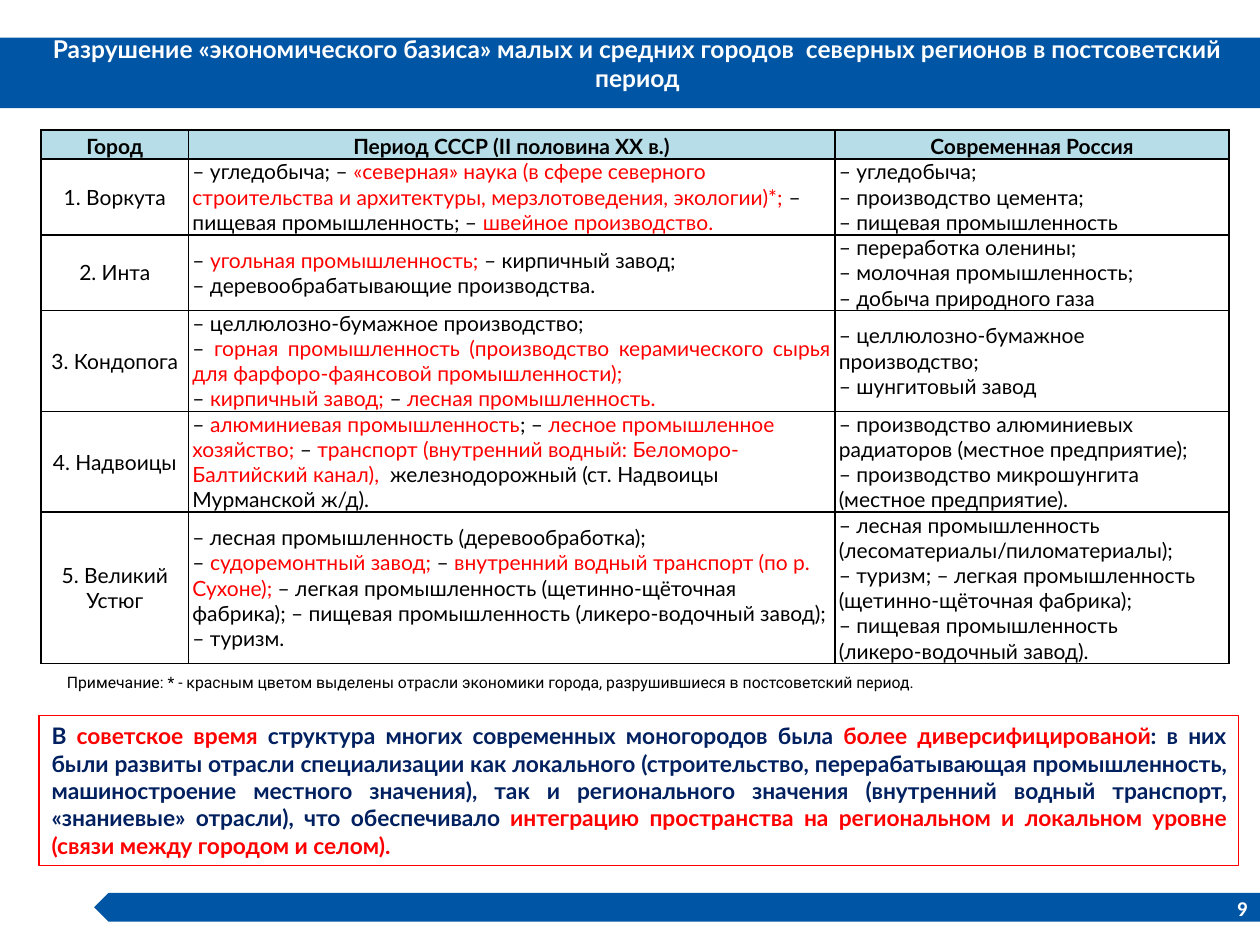
from lxml import etree
from pptx import Presentation
from pptx.dml.color import RGBColor
from pptx.enum.shapes import MSO_SHAPE
from pptx.enum.text import MSO_ANCHOR, MSO_AUTO_SIZE, PP_ALIGN
from pptx.oxml.ns import qn
from pptx.util import Cm, Pt

BLUE = RGBColor(0x00, 0x55, 0xA5)
NAVY = RGBColor(0x00, 0x20, 0x60)
RED = RGBColor(0xFF, 0x00, 0x00)
BLACK = RGBColor(0x00, 0x00, 0x00)
WHITE = RGBColor(0xFF, 0xFF, 0xFF)
HEADER_FILL = RGBColor(0xB7, 0xDE, 0xE8)

# Content: text in square brackets is red
TITLE = "Разрушение «экономического базиса» малых и средних городов  северных регионов в постсоветский период"
HEADERS = ["Город", "Период СССР (II половина ХХ в.)", "Современная Россия"]
CITIES = [
    ("1. Воркута",
     ["– угледобыча; – [«северная» наука (в сфере северного строительства и архитектуры, "
      "мерзлотоведения, экологии)*; ]– пищевая промышленность; –[ швейное производство.]"],
     ["– угледобыча;", "– производство цемента;", "– пищевая промышленность"]),
    ("2. Инта",
     ["– [угольная промышленность; ]– кирпичный завод;",
      "– деревообрабатывающие производства."],
     ["– переработка оленины;", "– молочная промышленность;", "– добыча природного газа"]),
    ("3. Кондопога",
     ["– целлюлозно-бумажное производство; ",
      "– [горная промышленность (производство керамического сырья для фарфоро-фаянсовой промышленности);]",
      "–[ кирпичный завод;] –[ лесная промышленность. ]"],
     ["– целлюлозно-бумажное производство;", "– шунгитовый завод"]),
    ("4. Надвоицы",
     ["– [алюминиевая промышленность]; – [лесное промышленное хозяйство; ]– "
      "[транспорт (внутренний водный: Беломоро-Балтийский канал),  ]"
      "железнодорожный (ст. Надвоицы Мурманской ж/д)."],
     ["– производство алюминиевых радиаторов (местное предприятие);",
      "– производство микрошунгита (местное предприятие)."]),
    ("5. Великий Устюг",
     ["– лесная промышленность (деревообработка);",
      "– [судоремонтный завод; ]– [внутренний водный транспорт (по р. Сухоне); ]"
      "– легкая промышленность (щетинно-щёточная фабрика); "
      "– пищевая промышленность (ликеро-водочный завод); – туризм."],
     ["– лесная промышленность (лесоматериалы/пиломатериалы);",
      "– туризм; – легкая промышленность (щетинно-щёточная фабрика);",
      "– пищевая промышленность", "(ликеро-водочный завод)."]),
]
JUSTIFIED_CITY = "3. Кондопога"
NOTE = "Примечание: * - красным цветом выделены отрасли экономики города, разрушившиеся в постсоветский период."
SUMMARY = (
    "В [советское время ]структура многих современных моногородов была [более диверсифицированой]"
    ": в них были развиты отрасли специализации как локального (строительство, перерабатывающая "
    "промышленность, машиностроение местного значения), так и регионального значения (внутренний "
    "водный транспорт, «знаниевые» отрасли), что обеспечивало [интеграцию пространства на "
    "региональном и локальном уровне (связи между городом и селом).]")
PAGE_NUMBER = "9"
COLUMN_WIDTHS = [2.97, 13.03, 7.95]
ROW_HEIGHTS = [0.58, 1.53, 1.52, 2.03, 2.03, 3.05]


def write(frame, lines, size, color=BLACK, font="Lato", bold=False,
          align=PP_ALIGN.LEFT, spacing=None):
    """Write one paragraph per line, one run per colour."""
    frame.word_wrap = True
    for index, line in enumerate(lines):
        paragraph = frame.paragraphs[0] if index == 0 else frame.add_paragraph()
        paragraph.alignment = align
        if spacing:
            paragraph.line_spacing = spacing
        for position, text in enumerate(line.replace("]", "[").split("[")):
            if text:
                run = paragraph.add_run()
                run.text = text
                run.font.name = font
                run.font.size = Pt(size)
                run.font.bold = bold
                run.font.color.rgb = RED if position % 2 else color


def add_box(slide, kind, left, top, width, height, fill=None, line=None):
    shape = slide.shapes.add_shape(kind, Cm(left), Cm(top), Cm(width), Cm(height))
    shape.shadow.inherit = False
    if fill is None:
        shape.fill.background()
    else:
        shape.fill.solid()
        shape.fill.fore_color.rgb = fill
    if line is None:
        shape.line.fill.background()
    else:
        shape.line.color.rgb = line
        shape.line.width = Pt(0.75)
    return shape


def add_text(slide, left, top, width, height, text, **style):
    box = slide.shapes.add_textbox(Cm(left), Cm(top), Cm(width), Cm(height))
    write(box.text_frame, [text], **style)
    return box


def format_cell(cell, fill=None):
    cell.vertical_anchor = MSO_ANCHOR.MIDDLE
    cell.margin_left = cell.margin_right = Cm(0.08)
    cell.margin_top = cell.margin_bottom = 0
    properties = cell._tc.get_or_add_tcPr()
    for side in ("a:lnL", "a:lnR", "a:lnT", "a:lnB"):
        border = etree.SubElement(properties, qn(side), w=str(Pt(1)))
        solid = etree.SubElement(border, qn("a:solidFill"))
        etree.SubElement(solid, qn("a:srgbClr"), val=str(BLACK))
    if fill is None:
        cell.fill.background()
    else:
        cell.fill.solid()
        cell.fill.fore_color.rgb = fill


def add_city_table(slide):
    table = slide.shapes.add_table(
        len(ROW_HEIGHTS), len(COLUMN_WIDTHS), Cm(0.83), Cm(2.62),
        Cm(sum(COLUMN_WIDTHS)), Cm(sum(ROW_HEIGHTS))).table
    for column, width in zip(table.columns, COLUMN_WIDTHS):
        column.width = Cm(width)
    for row, height in zip(table.rows, ROW_HEIGHTS):
        row.height = Cm(height)

    for cell, header in zip(table.rows[0].cells, HEADERS):
        format_cell(cell, HEADER_FILL)
        write(cell.text_frame, [header], 12, bold=True, align=PP_ALIGN.CENTER, spacing=1.15)

    for row_index, (city, soviet, modern) in enumerate(CITIES, start=1):
        soviet_align = PP_ALIGN.JUSTIFY if city == JUSTIFIED_CITY else PP_ALIGN.LEFT
        alignments = [PP_ALIGN.CENTER, soviet_align, PP_ALIGN.LEFT]
        for column_index, lines in enumerate([[city], soviet, modern]):
            cell = table.cell(row_index, column_index)
            format_cell(cell)
            write(cell.text_frame, lines, 12, align=alignments[column_index])


def main():
    presentation = Presentation()
    presentation.slide_width, presentation.slide_height = Cm(25.4), Cm(19.05)
    slide = presentation.slides.add_slide(presentation.slide_layouts[5])

    # Bands at the top and bottom
    add_box(slide, MSO_SHAPE.RECTANGLE, 0, 0.76, 25.4, 1.42, fill=BLUE)
    footer = add_box(slide, MSO_SHAPE.PENTAGON, 1.9, 18, 23.5, 0.58, fill=BLUE)
    footer._element.spPr.find(qn("a:xfrm")).set("flipH", "1")

    # Title, brought in front of its band
    title = slide.shapes.title
    title.left, title.top, title.width, title.height = Cm(0.3), Cm(0.84), Cm(25.1), Cm(0.86)
    title.text_frame.auto_size = MSO_AUTO_SIZE.NONE
    title.text_frame.vertical_anchor = MSO_ANCHOR.MIDDLE
    write(title.text_frame, [TITLE], 14, WHITE, bold=True, align=PP_ALIGN.CENTER)
    slide.shapes._spTree.append(title._element)

    # Table and its note
    add_city_table(slide)
    add_text(slide, 1.1, 13.44, 23.5, 0.64, NOTE, size=9, font="Roboto")

    # Summary
    summary = add_box(slide, MSO_SHAPE.RECTANGLE, 0.79, 14.43, 24.18, 3.02, line=RED)
    summary.text_frame.vertical_anchor = MSO_ANCHOR.TOP
    write(summary.text_frame, [SUMMARY], 13, NAVY, bold=True, align=PP_ALIGN.JUSTIFY)

    # Page number
    number = add_text(slide, 19.48, 17.8, 5.92, 1.02, PAGE_NUMBER, size=12, color=WHITE,
                      font="Calibri", bold=True, align=PP_ALIGN.RIGHT)
    number.text_frame.vertical_anchor = MSO_ANCHOR.MIDDLE

    presentation.save("out.pptx")


if __name__ == "__main__":
    main()
